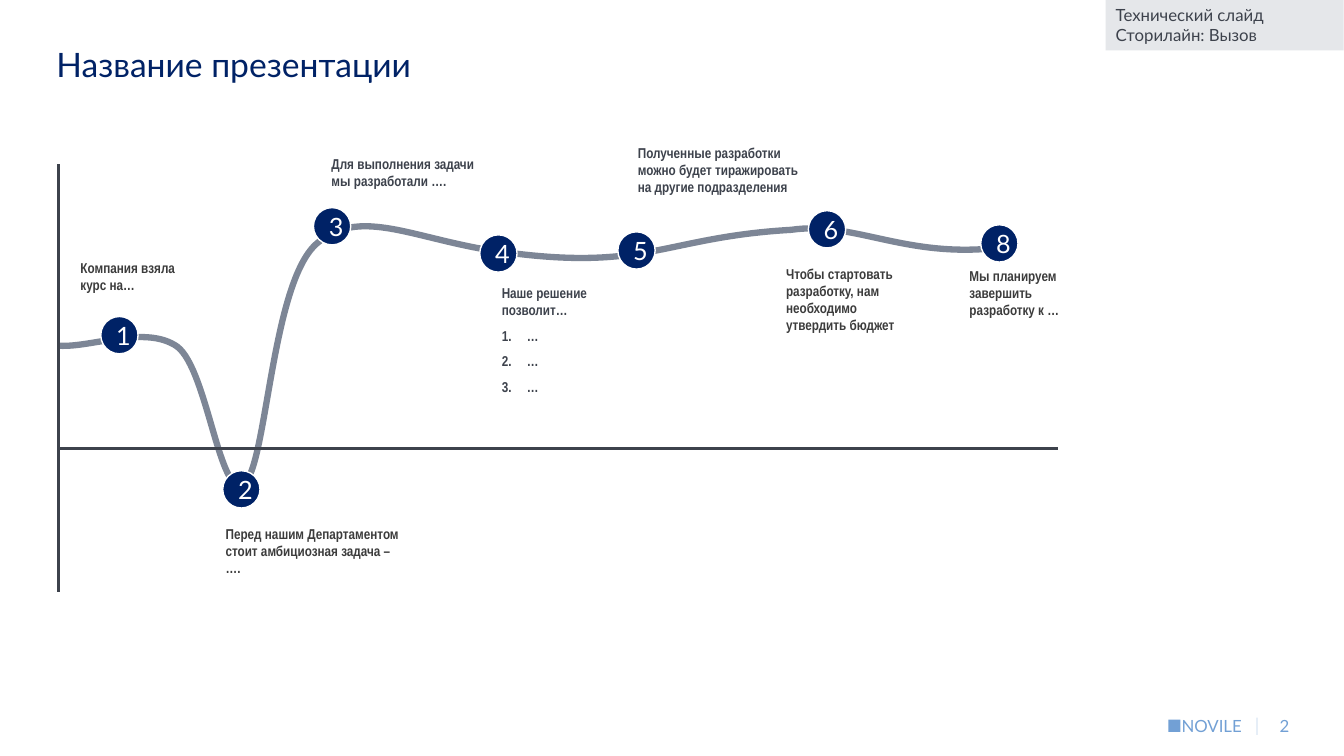
import copy

import lxml.etree
import pptx
import pptx.dml.color
import pptx.enum.shapes
import pptx.enum.text
import pptx.oxml.ns
import pptx.util

Inches = pptx.util.Inches
Pt = pptx.util.Pt
qn = pptx.oxml.ns.qn
ALIGN = pptx.enum.text.PP_ALIGN
ANCHOR = pptx.enum.text.MSO_ANCHOR
SHAPE = pptx.enum.shapes.MSO_SHAPE

COLORS = {"navy": "002266", "slate": "3D424C", "text": "3C3C3C", "curve": "7D8696",
          "panel": "E5E7EA", "footer": "72A0D5", "white": "FFFFFF"}
NOTE_INSETS = (0.1, 0.05, 0, 0.05)
MARKER_SIZE = 0.37


def color(name):
    return pptx.dml.color.RGBColor.from_string(COLORS[name])


def add_element(parent, tag, **attributes):
    return lxml.etree.SubElement(parent, qn(tag), {key: str(value) for key, value in attributes.items()})


def write_text(frame, text, size=12, font="Lato", ink="slate", bold=False, align=ALIGN.LEFT,
               anchor=ANCHOR.TOP, insets=(0.1, 0.05, 0.1, 0.05), numbered=()):
    """Fill a text frame; a line feed in the text is a line break."""
    frame.word_wrap = True
    frame.vertical_anchor = anchor
    frame.margin_left, frame.margin_top, frame.margin_right, frame.margin_bottom = map(Inches, insets)
    for index, content in enumerate((text, *numbered)):
        paragraph = frame.add_paragraph() if index else frame.paragraphs[0]
        paragraph.text = content.replace("\n", "\v")
        paragraph.alignment = align
        if index:
            paragraph.space_before = Pt(6)
            properties = paragraph._p.get_or_add_pPr()
            properties.set("marL", str(Inches(0.25)))
            properties.set("indent", str(-Inches(0.25)))
            add_element(properties, "a:buAutoNum", type="arabicPeriod")
        for run in paragraph.runs:
            run.font.name, run.font.size, run.font.bold = font, Pt(size), bold
            run.font.color.rgb = color(ink)
        for line_break in paragraph._p.findall(qn("a:br")):
            line_break.insert(0, copy.deepcopy(paragraph.runs[0]._r.rPr))


class Storyline:
    def __init__(self, slide):
        self.slide = slide

    def text(self, box, text, **style):
        shape = self.slide.shapes.add_textbox(*map(Inches, box))
        write_text(shape.text_frame, text, **style)

    def shape(self, kind, box, fill, outline=None):
        shape = self.slide.shapes.add_shape(kind, *map(Inches, box))
        shape.shadow.inherit = False
        shape.fill.solid()
        shape.fill.fore_color.rgb = color(fill)
        if outline:
            shape.line.color.rgb = color(outline)
            shape.line.width = Pt(1)
        else:
            shape.line.fill.background()
        return shape

    def line(self, start, end, ink, width, opacity=100):
        connector = self.slide.shapes.add_connector(
            pptx.enum.shapes.MSO_CONNECTOR.STRAIGHT, *map(Inches, (*start, *end)))
        connector.line.color.rgb = color(ink)
        connector.line.width = Pt(width)
        properties = connector._element.spPr
        if opacity < 100:
            add_element(properties.find(".//" + qn("a:srgbClr")), "a:alpha", val=opacity * 1000)
        add_element(properties, "a:effectLst")

    def curve(self, start, segments):
        """Draw a freeform through the segment ends, then bend it with the control points."""
        builder = self.slide.shapes.build_freeform(*map(Inches, start))
        builder.add_line_segments([tuple(map(Inches, segment[-1])) for segment in segments], close=False)
        shape = builder.convert_to_shape()
        shape.shadow.inherit = False
        shape.fill.background()
        shape.line.color.rgb = color("curve")
        shape.line.width = Pt(4.5)
        outline = shape._element.find(".//" + qn("a:path"))
        for straight in outline.findall(qn("a:lnTo")):
            outline.remove(straight)
        for segment in segments:
            bend = add_element(outline, "a:cubicBezTo")
            for x, y in segment:
                add_element(bend, "a:pt", x=Inches(x) - shape.left, y=Inches(y) - shape.top)

    def marker(self, label, left, top):
        shape = self.shape(SHAPE.OVAL, (left, top, MARKER_SIZE, MARKER_SIZE), "navy", "white")
        write_text(shape.text_frame, label, size=18, ink="white", align=ALIGN.CENTER,
                   anchor=ANCHOR.MIDDLE)

    def note(self, box, text, ink="slate", numbered=()):
        self.text(box, text, size=10.2, font="Arial Narrow", ink=ink, bold=True,
                  insets=NOTE_INSETS, numbered=numbered)


CURVE_START = (0.59, 3.43)
CURVE_SEGMENTS = [
    ((0.91, 3.45), (1.45, 3.22), (1.76, 3.44)),
    ((2.06, 3.67), (2.18, 4.97), (2.42, 4.8)),
    ((2.65, 4.63), (2.69, 2.79), (3.15, 2.41)),
    ((3.61, 2.02), (4.19, 2.43), (5.15, 2.52)),
    ((6.43, 2.67), (6.64, 2.35), (7.85, 2.28)),
    ((8.47, 2.19), (8.97, 2.56), (9.89, 2.46)),
]
MARKERS = [("1", 1, 3.14), ("2", 2.21, 4.67), ("3", 3.11, 2.06), ("4", 4.76, 2.33),
           ("5", 6.13, 2.3), ("6", 8.02, 2.09), ("8", 9.73, 2.23)]
NOTES = [
    ((0.7, 2.52, 1.29, 0.45), "Компания взяла курс на…", "text"),
    ((2.14, 5.16, 1.93, 1.02), "Перед нашим Департаментом стоит амбициозная задача – \n….", "text"),
    ((3.19, 1.49, 1.69, 0.56), "Для выполнения задачи мы разработали ….", "slate"),
    ((4.88, 2.77, 1.43, 0.56), "Наше решение позволит…", "slate", ("…",) * 3),
    ((6.23, 1.38, 1.69, 0.85),
     "Полученные разработки можно будет тиражировать на другие подразделения", "slate"),
    ((9.52, 2.6, 1.07, 0.58), "Мы планируем завершить разработку к …", "text"),
    ((7.7, 2.58, 1.31, 0.5), "Чтобы стартовать разработку, нам необходимо утвердить бюджет", "text"),
]


def main():
    presentation = pptx.Presentation()
    presentation.slide_width, presentation.slide_height = Inches(40 / 3), Inches(7.5)
    story = Storyline(presentation.slides.add_slide(presentation.slide_layouts[6]))

    # Footer
    footer = {"ink": "footer", "align": ALIGN.RIGHT, "insets": (0, 0, 0, 0)}
    story.text((12.07, 7.1, 0.72, 0.18), "2", **footer)
    story.shape(SHAPE.RECTANGLE, (11.59, 7.14, 0.12, 0.12), "footer")
    story.text((11.6, 7.1, 0.72, 0.18), "NOVILE", **footer)
    story.line((12.47, 7.12), (12.47, 7.29), "footer", 0.5, opacity=50)

    # Title and corner label
    story.text((0.56, 0.39, 12.21, 0.59), "Название презентации", size=24, ink="navy",
               insets=(0, 0.05, 0.1, 0.05))
    label = story.shape(SHAPE.RECTANGLE, (10.97, 0, 2.36, 0.5), "panel")
    write_text(label.text_frame, "Технический слайд\nСторилайн: Вызов")

    # Story curve and axes
    story.curve(CURVE_START, CURVE_SEGMENTS)
    story.line((0.58, 4.45), (10.5, 4.45), "slate", 2)
    story.line((0.58, 5.87), (0.58, 1.63), "slate", 2)

    # Numbered steps and their notes
    for marker in MARKERS:
        story.marker(*marker)
    for note in NOTES:
        story.note(*note)

    presentation.save("out.pptx")


if __name__ == "__main__":
    main()
